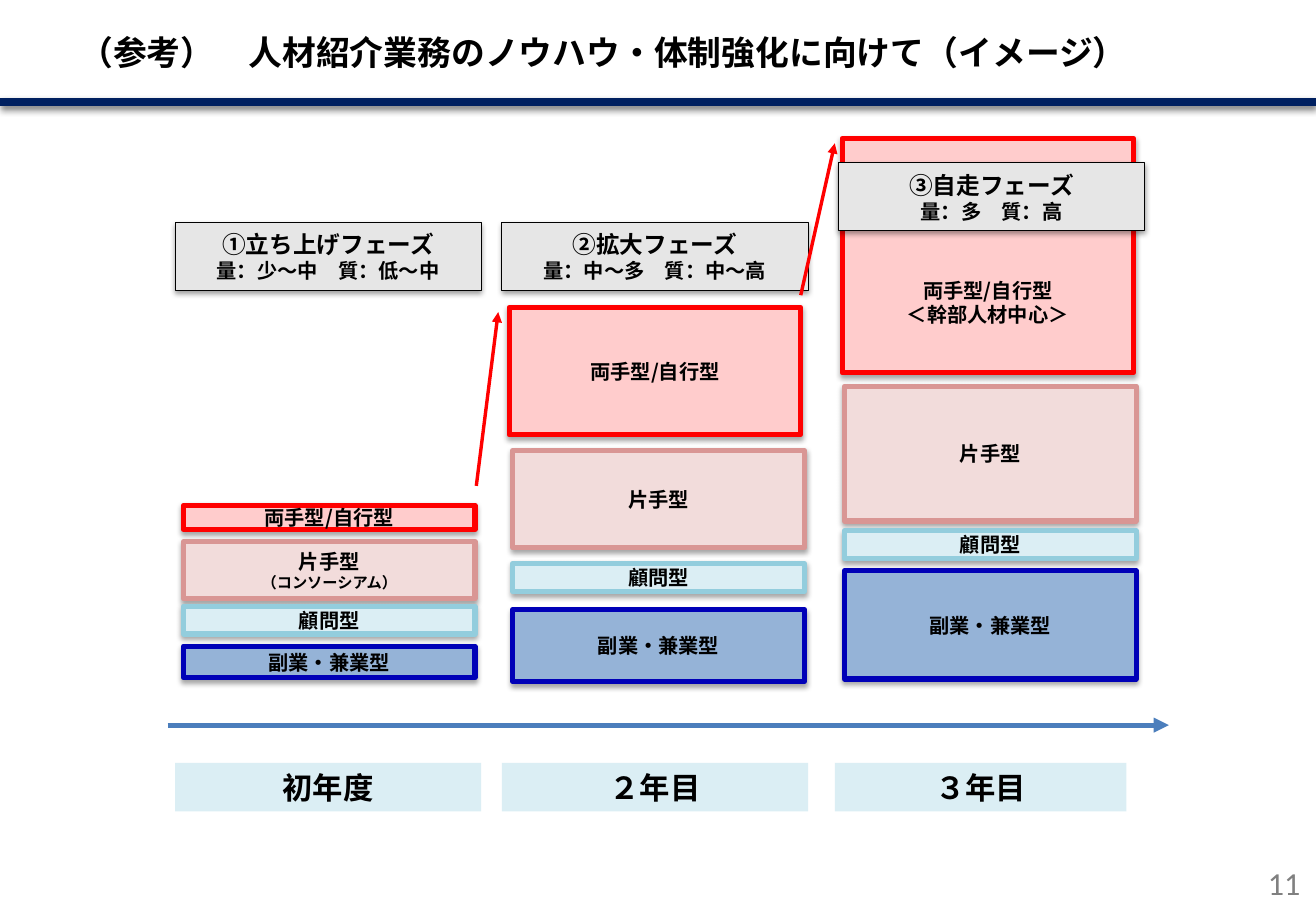
from lxml import etree
from pptx import Presentation
from pptx.dml.color import RGBColor
from pptx.enum.shapes import MSO_CONNECTOR, MSO_SHAPE
from pptx.enum.text import MSO_ANCHOR, PP_ALIGN
from pptx.oxml.ns import qn
from pptx.util import Pt

RECT, LINE = MSO_SHAPE.RECTANGLE, MSO_CONNECTOR.STRAIGHT
MIDDLE = MSO_ANCHOR.MIDDLE
CENTER, RIGHT = PP_ALIGN.CENTER, PP_ALIGN.RIGHT
PX = 9144  # 100 px to the inch
GOTHIC = "Noto Sans CJK JP"
HEX = {
    "black": "000000", "gray": "808080", "silver": "E6E6E6", "navy": "002060",
    "red": "FF0000", "pink": "FFCCCC", "rose": "D99694", "blush": "F2DCDB",
    "aqua": "93CDDD", "ice": "DBEEF4", "blue": "0000B7", "sky": "95B3D7",
    "steel": "4B7EBC",
}
RGB = {name: RGBColor.from_string(code) for name, code in HEX.items()}


def write(shape, text, sizes=(12,), color="black", bold=True, font=GOTHIC,
          align=CENTER, pad=(10, 5, 10, 5)):
    """Fill a shape with one paragraph per line; the last size carries on."""
    frame = shape.text_frame
    frame.word_wrap = True
    frame.vertical_anchor = MIDDLE
    (frame.margin_left, frame.margin_top,
     frame.margin_right, frame.margin_bottom) = [n * PX for n in pad]
    for i, line in enumerate(text.split("\n")):
        para = frame.paragraphs[0] if i == 0 else frame.add_paragraph()
        para.alignment = align
        run = para.add_run()
        run.text = line
        run.font.name = font
        run.font.size = Pt(sizes[min(i, len(sizes) - 1)])
        run.font.bold = bold
        run.font.color.rgb = RGB[color]
        east = etree.SubElement(run.font._element, qn("a:ea"))
        east.set("typeface", font)


def shade(shape, color="black", alpha=0, blur=0, dist=0):
    """Give a shape a downward shadow, or none when alpha is 0."""
    effect = etree.SubElement(shape._element.spPr, qn("a:effectLst"))
    if alpha:
        outer = etree.SubElement(
            effect, qn("a:outerShdw"), blurRad=str(Pt(blur)),
            dist=str(Pt(dist)), dir="5400000", algn="t", rotWithShape="0")
        tint = etree.SubElement(outer, qn("a:srgbClr"), val=HEX[color])
        etree.SubElement(tint, qn("a:alpha"), val=str(alpha * 1000))


deck = Presentation()
deck.slide_width, deck.slide_height = 1083 * PX, 750 * PX
slide = deck.slides.add_slide(deck.slide_layouts[5])
shapes = slide.shapes

# Title
title = shapes.title
title.left, title.top, title.width, title.height = [
    n * PX for n in (51, 20, 891, 45)]
write(title, "（参考）\u3000人材紹介業務のノウハウ・体制強化に向けて（イメージ）".replace("\u3000", "　"),
      sizes=(20,))

# Looks of the boxes: fill, line, line width, shadow, text format
soft = {"alpha": 35, "blur": 3.1, "dist": 1.8}
LOOKS = {
    "year": ("ice", None, 0, {}, {"sizes": (18,)}),
    "phase": ("silver", "black", 0.5, {"alpha": 38, "blur": 3.1, "dist": 1.6},
              {"sizes": (14, 12), "pad": (4, 4, 4, 4)}),
    "both": ("pink", "red", 3, soft, {}),
    "lead": ("pink", "red", 3, soft, {"pad": (10, 82, 10, 5)}),
    "one": ("blush", "rose", 3, soft, {"sizes": (12, 9)}),
    "guide": ("ice", "aqua", 3, soft, {}),
    "side": ("sky", "blue", 3, soft, {}),
}

# Boxes by year: look, left, top, width, height, text
BOXES = [
    ("year", 144, 628, 252, 40, "初年度"),
    ("phase", 144, 183, 252, 56, "①立ち上げフェーズ\n量：少～中　質：低～中"),
    ("both", 151, 416, 240, 20, "両手型/自行型"),
    ("one", 151, 446, 240, 47, "片手型\n（コンソーシアム）"),
    ("guide", 151, 499, 240, 23, "顧問型"),
    ("side", 151, 532, 240, 26, "副業・兼業型"),

    ("year", 413, 628, 252, 40, "２年目"),
    ("phase", 413, 183, 252, 56, "②拡大フェーズ\n量：中～多　質：中～高"),
    ("both", 419, 253, 240, 105, "両手型/自行型"),
    ("one", 422, 371, 240, 80, "片手型"),
    ("guide", 422, 464, 240, 23, "顧問型"),
    ("side", 422, 502, 240, 59, "副業・兼業型"),

    ("year", 687, 628, 240, 40, "３年目"),
    ("lead", 693, 114, 240, 193, "両手型/自行型\n＜幹部人材中心＞"),
    ("phase", 690, 134, 252, 56, "③自走フェーズ\n量：多　質：高"),
    ("one", 695, 318, 240, 111, "片手型"),
    ("guide", 695, 437, 240, 23, "顧問型"),
    ("side", 695, 470, 240, 89, "副業・兼業型"),
]
for look, left, top, width, height, text in BOXES:
    fill, edge, weight, shadow, form = LOOKS[look]
    box = shapes.add_shape(RECT, left * PX, top * PX, width * PX, height * PX)
    box.fill.solid()
    box.fill.fore_color.rgb = RGB[fill]
    if edge:
        box.line.color.rgb = RGB[edge]
        box.line.width = Pt(weight)
    else:
        box.line.fill.background()
    shade(box, **shadow)
    write(box, text, **form)

# Time axis, growth arrows and title rule
LINES = [
    (138, 597, 962, 597, "steel", 3, True, {}),
    (392, 400, 410, 257, "red", 2, True, {}),
    (659, 243, 687, 118, "red", 2, True, {}),
    (0, 84, 1083, 84, "navy", 4.75, False,
     {"color": "gray", "alpha": 100, "blur": 4, "dist": 2}),
]
for x1, y1, x2, y2, color, weight, arrow, shadow in LINES:
    line = shapes.add_connector(LINE, x1 * PX, y1 * PX, x2 * PX, y2 * PX)
    line.line.color.rgb = RGB[color]
    line.line.width = Pt(weight)
    if arrow:
        etree.SubElement(line.line._get_or_add_ln(), qn("a:tailEnd"),
                         type="triangle")
    shade(line, **shadow)

# Page number
page = shapes.add_textbox(827 * PX, 707 * PX, 253 * PX, 40 * PX)
write(page, "11", sizes=(19,), color="gray", bold=False, font="Calibri",
      align=RIGHT)

deck.save("out.pptx")
